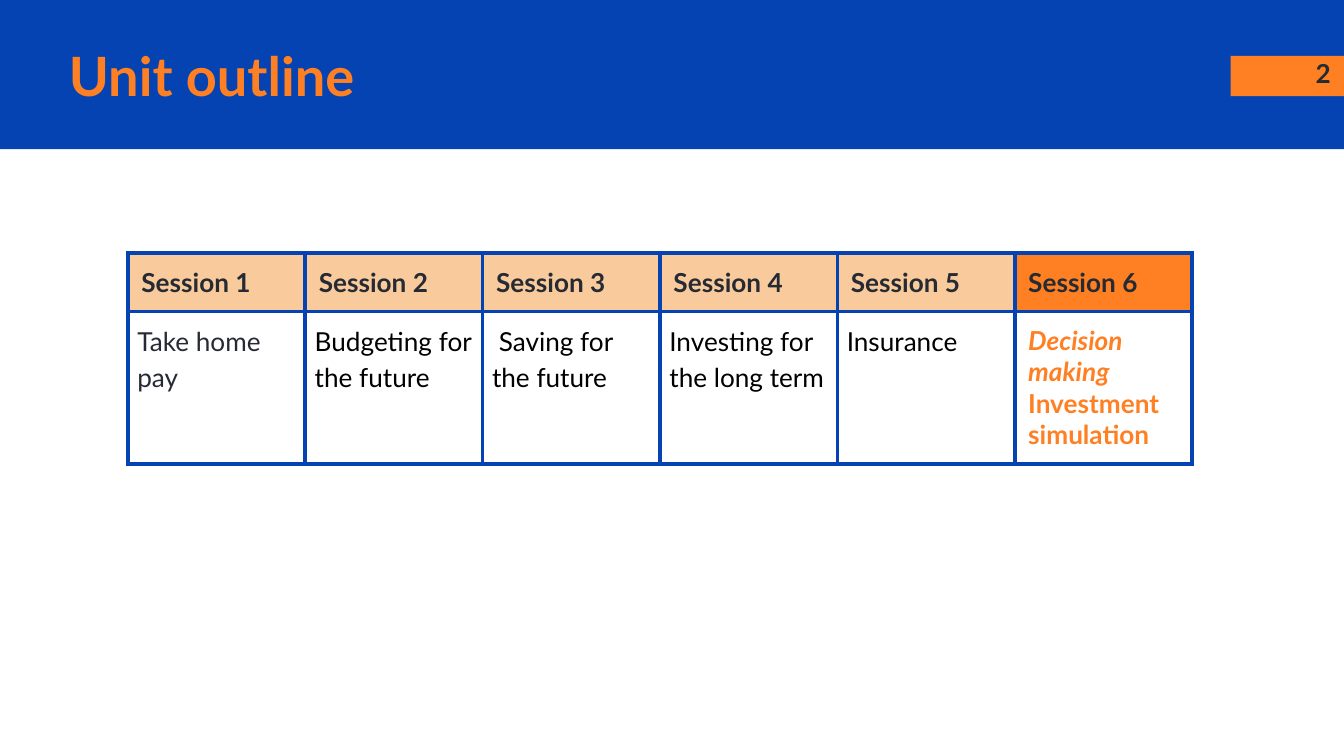
from lxml import etree
from pptx import Presentation
from pptx import util as u
from pptx.dml.color import RGBColor
from pptx.enum import shapes, text
from pptx.oxml import ns

THEME = dict(font="Lato", blue="0543B3", orange="FF8022", peach="F9CB9C",
             dark="262A33", black="000000", white="FFFFFF",
             title_size=29, body_size=14, border=2.25)

# A 16:9 slide on a grid of 100 columns and 100 rows
presentation = Presentation()
presentation.slide_width = u.Inches(10)
presentation.slide_height = presentation.slide_width * 9 // 16
slide = presentation.slides.add_slide(presentation.slide_layouts[6])
COLUMN, ROW = presentation.slide_width / 100, presentation.slide_height / 100


def format_runs(paragraph, color, size="body_size", bold=False):
    for run in paragraph.runs:
        run.font.name = THEME["font"]
        run.font.size = u.Pt(THEME[size])
        run.font.bold = bold
        run.font.color.rgb = RGBColor.from_string(THEME[color])


def set_margins(frame, columns):
    for side in ("left", "right", "top", "bottom"):
        setattr(frame, f"margin_{side}", int(columns * COLUMN))


# Header band and page number tab
for color, left, top, width, height in (("blue", 0, 0, 100, 19.75),
                                        ("orange", 91.56, 7.4, 8.44, 5.33)):
    band = slide.shapes.add_shape(shapes.MSO_SHAPE.RECTANGLE,
                                  int(left * COLUMN), int(top * ROW),
                                  int(width * COLUMN), int(height * ROW))
    band.shadow.inherit = False
    band.fill.solid()
    band.fill.fore_color.rgb = RGBColor.from_string(THEME[color])
    band.line.fill.background()

# Page number and title
for words, left, top, width, height, color, size, align, anchor in (
        ("2", 94, 5.87, 6, 7.64, "dark", "body_size",
         text.PP_ALIGN.RIGHT, text.MSO_ANCHOR.TOP),
        ("Unit outline", 4.15, 4.9, 84.6, 9.96, "orange", "title_size",
         text.PP_ALIGN.LEFT, text.MSO_ANCHOR.MIDDLE)):
    box = slide.shapes.add_textbox(int(left * COLUMN), int(top * ROW),
                                   int(width * COLUMN), int(height * ROW))
    frame = box.text_frame
    frame.word_wrap = True
    frame.vertical_anchor = anchor
    set_margins(frame, 1)
    frame.text = words
    frame.paragraphs[0].alignment = align
    format_runs(frame.paragraphs[0], color, size, bold=True)

# Session table: six equal columns, a heading row and a topic row
topics = ["Take home pay", "Budgeting for the future", "Saving for the future",
          "Investing for the long term", "Insurance", "Decision making "]
last = len(topics) - 1
column_width = int(13.2 * COLUMN)
row_heights = [int(rows * ROW) for rows in (7.64, 20.15)]
table = slide.shapes.add_table(2, len(topics), int(9.52 * COLUMN), int(33.47 * ROW),
                               column_width * len(topics), sum(row_heights)).table
table.first_row = table.horz_banding = False
for row, height in zip(table.rows, row_heights):
    row.height = height

for index, topic in enumerate(topics):
    table.columns[index].width = column_width
    heading, body = table.cell(0, index), table.cell(1, index)
    heading.text, body.text = f"Session {index + 1}", topic
    fills = ("orange" if index == last else "peach", "white")

    for cell, fill in zip((heading, body), fills):
        properties = cell._tc.get_or_add_tcPr()
        for edge in "LRTB":
            line = etree.SubElement(properties, ns.qn(f"a:ln{edge}"),
                                    w=str(u.Pt(THEME["border"])))
            solid = etree.SubElement(line, ns.qn("a:solidFill"))
            etree.SubElement(solid, ns.qn("a:srgbClr"), val=THEME["blue"])
        cell.fill.solid()
        cell.fill.fore_color.rgb = RGBColor.from_string(THEME[fill])
        set_margins(cell, 1)

    format_runs(heading.text_frame.paragraphs[0], "dark", bold=True)
    paragraph = body.text_frame.paragraphs[0]
    if index == last:
        paragraph.add_run().text = "Investment simulation"
        format_runs(paragraph, "orange", bold=True)
        paragraph.runs[0].font.italic = True
    else:
        set_margins(body, 0.7)
        paragraph.line_spacing = 1.15
        format_runs(paragraph, "black" if index else "dark")

# The third topic starts slightly indented
saving = table.cell(1, 2).text_frame.paragraphs[0]
saving._p.get_or_add_pPr().set("indent", str(int(0.5 * COLUMN)))

presentation.save("out.pptx")
